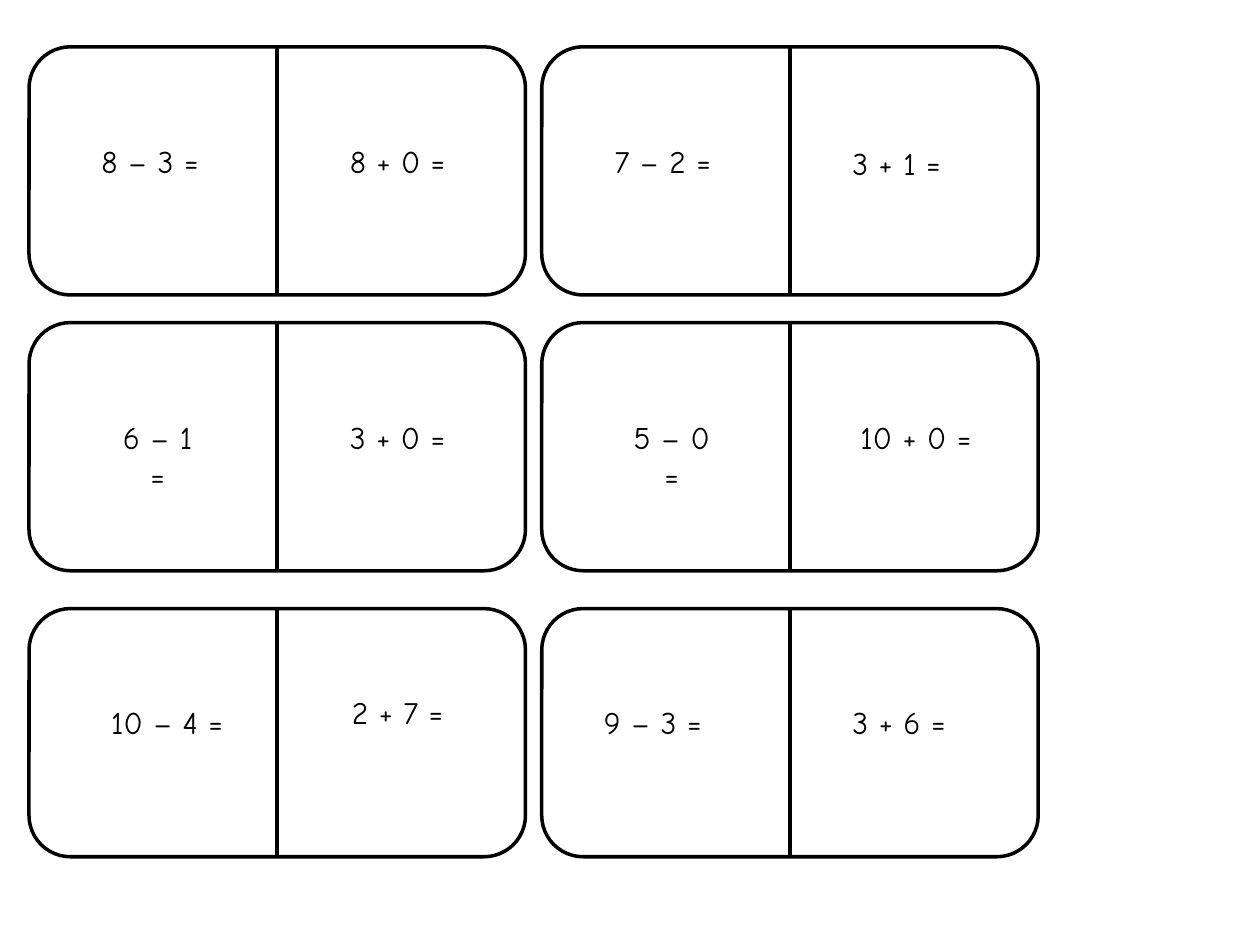
from dataclasses import dataclass
from itertools import product

from lxml.etree import SubElement
from pptx import Presentation
from pptx.dml.color import RGBColor
from pptx.enum.shapes import MSO_CONNECTOR as Conn, MSO_SHAPE as Shape
from pptx.enum.text import MSO_ANCHOR as Anchor, MSO_AUTO_SIZE as AutoSize, PP_ALIGN as Align
from pptx.oxml.ns import qn
from pptx.util import Pt

COLORS = {"ink": "000000"}
FONT = "Comic Neue"
LINE_WIDTH = 2
CARD_WIDTH, CARD_HEIGHT = 283.7, 141.8
CARD_LEFTS = (16.6, 309.6)
CARD_TOPS = (26.8, 184.4, 347.8)
TEXT_HEIGHT = 28.8


@dataclass
class Problem:
    text: str
    left: float
    top: float
    width: float
    wrap: bool = False


PROBLEMS = [
    Problem("8 – 3 =", 50.4, 77.8, 70.6),
    Problem("8 + 0 =", 191.5, 77.8, 71.3),
    Problem("7 – 2 =", 343.4, 77.8, 70.6),
    Problem("3 + 1 =", 478.1, 78.5, 68.4),
    Problem("6 – 1 =", 56.2, 235.4, 67.7, wrap=True),
    Problem("3 + 0 =", 191.5, 235.4, 71.3),
    Problem("5 – 0 =", 348.5, 235.4, 70.6, wrap=True),
    Problem("10 + 0 =", 483.8, 235.4, 79.2),
    Problem("10 – 4 =", 56.2, 398.2, 78.5),
    Problem("2 + 7 =", 191.5, 392.4, 71.3),
    Problem("9 – 3 =", 337.7, 398.2, 70.6),
    Problem("3 + 6 =", 478.1, 398.2, 71.3),
]


def rgb(name: str) -> RGBColor:
    return RGBColor.from_string(COLORS[name])


def set_outline(s) -> None:
    s.line.color.rgb = rgb("ink")
    s.line.width = Pt(LINE_WIDTH)


def draw_card(slide, left: float, top: float) -> None:
    """Draw a domino: a rounded card split in two by a vertical divider."""
    group = slide.shapes.add_group_shape()
    card = group.shapes.add_shape(Shape.ROUNDED_RECTANGLE, Pt(left), Pt(top),
                                  Pt(CARD_WIDTH), Pt(CARD_HEIGHT))
    card.shadow.inherit = False
    card.fill.background()
    set_outline(card)

    middle = Pt(left + CARD_WIDTH / 2)
    divider = group.shapes.add_connector(Conn.STRAIGHT, middle, Pt(top),
                                         middle, Pt(top + CARD_HEIGHT))
    set_outline(divider)
    SubElement(divider._element.spPr, qn("a:effectLst"))


def add_text(slide, text: str, *, left: float, top: float, width: float,
             wrap: bool = False, size: float = 18, color: str = "ink") -> None:
    s = slide.shapes.add_textbox(Pt(left), Pt(top), Pt(width), Pt(TEXT_HEIGHT))
    tf = s.text_frame
    tf.word_wrap = wrap
    tf.auto_size = AutoSize.SHAPE_TO_FIT_TEXT
    tf.vertical_anchor = Anchor.TOP
    p = tf.paragraphs[0]
    p.alignment = Align.CENTER
    r = p.add_run()
    r.text = text
    r.font.name = FONT
    r.font.size = Pt(size)
    r.font.color.rgb = rgb(color)


def main() -> None:
    prs = Presentation()
    prs.slide_width, prs.slide_height = Pt(720), Pt(540)
    slide = prs.slides.add_slide(prs.slide_layouts[6])
    for top, left in product(CARD_TOPS, CARD_LEFTS):
        draw_card(slide, left, top)
    for q in PROBLEMS:
        add_text(slide, q.text, left=q.left, top=q.top, width=q.width, wrap=q.wrap)
    prs.save("out.pptx")


if __name__ == "__main__":
    main()
